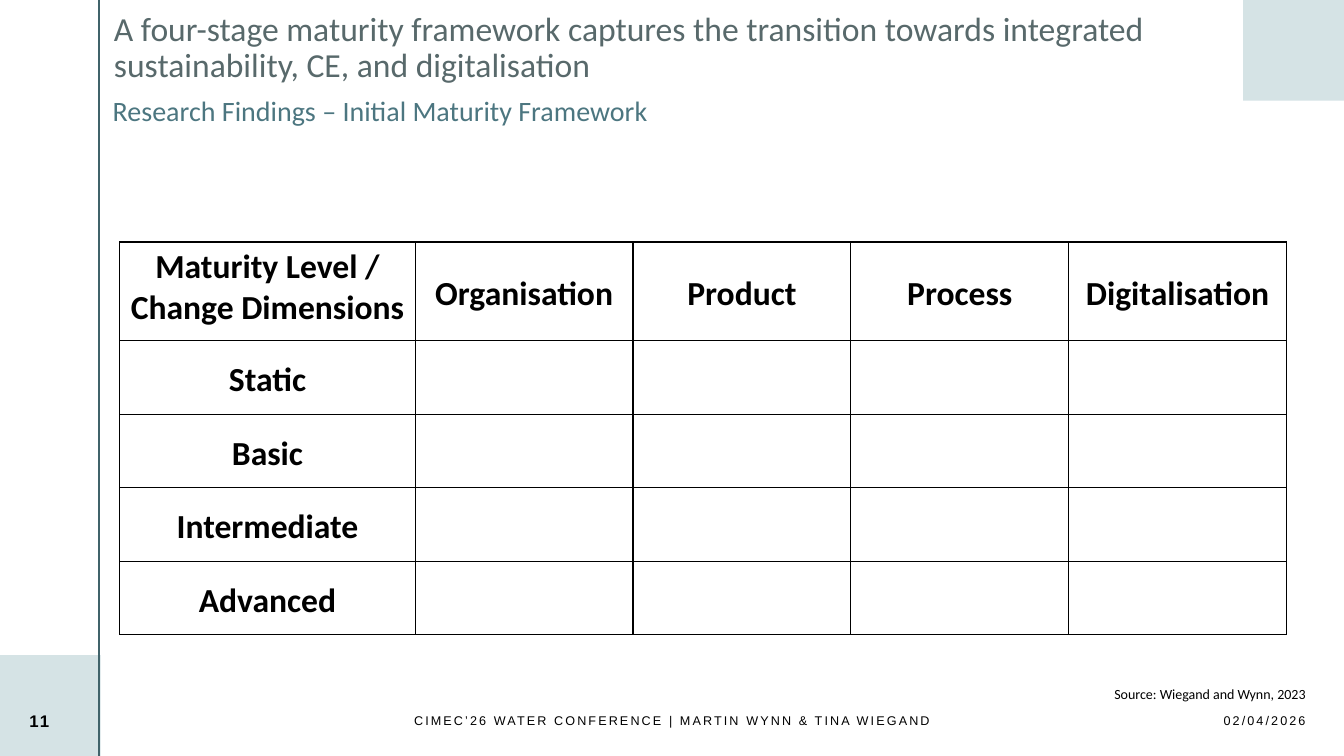
from dataclasses import dataclass
from lxml.etree import SubElement
from pptx import Presentation
from pptx.dml.color import RGBColor
from pptx.enum.shapes import MSO_CONNECTOR, MSO_SHAPE
from pptx.enum.text import MSO_ANCHOR, MSO_AUTO_SIZE, PP_ALIGN
from pptx.oxml.ns import qn
from pptx.util import Pt


@dataclass(frozen=True)
class Style:
    size: float
    color: str = "000000"
    font: str = "Calibri"
    bold: bool = False
    tracking: float = 0


@dataclass(frozen=True)
class Theme:
    panel: str = "D5E3E5"
    rule: str = "40636A"
    grid: str = "000000"
    title: Style = Style(24, "58696B")
    subtitle: Style = Style(20, "4C7680")
    table: Style = Style(24, bold=True)
    source: Style = Style(10)
    footer: Style = Style(9, font="Arial", tracking=1.5)
    number: Style = Style(12, font="Arial", bold=True, tracking=1.5)


THEME = Theme()
LEFT, CENTER, RIGHT = PP_ALIGN.LEFT, PP_ALIGN.CENTER, PP_ALIGN.RIGHT
TOP, MIDDLE = MSO_ANCHOR.TOP, MSO_ANCHOR.MIDDLE

TITLE = ("A four-stage maturity framework captures the transition towards "
         "integrated sustainability, CE, and digitalisation")
CORNER = "Maturity Level / Change Dimensions"
DIMENSIONS = ["Organisation", "Product", "Process", "Digitalisation"]
LEVELS = ["Static", "Basic", "Intermediate", "Advanced"]
TEXTS = [
    ("02/04/2026", (830.9, 500.4, 108.7, 28.8), THEME.footer, RIGHT, MIDDLE, 1),
    ("CIMEC’26 WATER CONFERENCE | MARTIN WYNN & TINA WIEGAND",
     (281.5, 500.4, 396.7, 28.8), THEME.footer, CENTER, MIDDLE, 1),
    ("Research Findings – Initial Maturity Framework",
     (73.4, 61.2, 885.6, 38.9), THEME.subtitle, LEFT, MIDDLE, 0.9),
    ("11", (-10, 489, 76.3, 51), THEME.number, CENTER, MIDDLE, 1),
    ("Source: Wiegand and Wynn, 2023",
     (739.4, 486, 200.2, 51), THEME.source, RIGHT, TOP, 1),
]

WIDTH, HEIGHT, PANEL = 960, 540, 72
RULE_X = 70.6
TITLE_BOX = (74.2, 0, 812.2, 69.8)
TABLE_LEFT, TABLE_TOP = 85.6, 172.8
COLUMNS = [211] + [155.6] * len(DIMENSIONS)
ROWS = [70.5] + [52.5] * len(LEVELS)


def points(values):
    return [Pt(value) for value in values]


def write(frame, text, style, align, spacing=1):
    paragraph = frame.paragraphs[0]
    paragraph.alignment = align
    paragraph.line_spacing = spacing
    run = paragraph.add_run()
    run.text = text
    run.font.size = Pt(style.size)
    run.font.name = style.font
    run.font.bold = style.bold
    run.font.color.rgb = RGBColor.from_string(style.color)
    if style.tracking:
        run.font._element.set("spc", str(int(style.tracking * 100)))


def add_text(slide, text, box, style, align, anchor, spacing):
    frame = slide.shapes.add_textbox(*points(box)).text_frame
    frame.word_wrap = True
    frame.vertical_anchor = anchor
    write(frame, text, style, align, spacing)


def add_panel(slide, left, top):
    panel = slide.shapes.add_shape(MSO_SHAPE.RECTANGLE, *points((left, top, PANEL, PANEL)))
    panel.shadow.inherit = False
    panel.fill.solid()
    panel.fill.fore_color.rgb = RGBColor.from_string(THEME.panel)
    panel.line.fill.background()


def add_rule(slide):
    rule = slide.shapes.add_connector(
        MSO_CONNECTOR.STRAIGHT, *points((RULE_X, 0, RULE_X, HEIGHT)))
    rule.line.width = Pt(1.5)
    rule.line.color.rgb = RGBColor.from_string(THEME.rule)
    SubElement(rule._element.spPr, qn("a:effectLst"))


def add_title(slide):
    title = slide.shapes.title
    title.left, title.top, title.width, title.height = points(TITLE_BOX)
    frame = title.text_frame
    frame.auto_size = MSO_AUTO_SIZE.NONE
    frame.word_wrap = True
    frame.vertical_anchor = MIDDLE
    write(frame, TITLE, THEME.title, LEFT, 0.9)


def format_cell(cell):
    properties = cell._tc.get_or_add_tcPr()
    for side in ("lnL", "lnR", "lnT", "lnB"):
        border = SubElement(properties, qn(f"a:{side}"), w=str(Pt(1)))
        fill = SubElement(border, qn("a:solidFill"))
        SubElement(fill, qn("a:srgbClr"), val=THEME.grid)
    cell.fill.background()


def add_framework(slide):
    cells = [[CORNER] + DIMENSIONS]
    cells += [[level] + [""] * len(DIMENSIONS) for level in LEVELS]
    table = slide.shapes.add_table(
        len(ROWS), len(COLUMNS),
        *points((TABLE_LEFT, TABLE_TOP, sum(COLUMNS), sum(ROWS)))).table
    table.first_row = table.horz_banding = False
    for column, width in zip(table.columns, COLUMNS):
        column.width = Pt(width)
    for row, height, texts in zip(table.rows, ROWS, cells):
        row.height = Pt(height)
        for cell, text in zip(row.cells, texts):
            format_cell(cell)
            if text == CORNER:
                write(cell.text_frame, text, THEME.table, CENTER)
            elif text:
                cell.vertical_anchor = MIDDLE
                cell.margin_left = cell.margin_right = Pt(0.7)
                cell.margin_top = cell.margin_bottom = Pt(0)
                write(cell.text_frame, text, THEME.table, CENTER, 1.15)


def main():
    presentation = Presentation()
    presentation.slide_width, presentation.slide_height = points((WIDTH, HEIGHT))
    slide = presentation.slides.add_slide(presentation.slide_layouts[5])
    add_panel(slide, 0, HEIGHT - PANEL)
    add_panel(slide, WIDTH - PANEL, 0)
    add_rule(slide)
    add_title(slide)
    for entry in TEXTS:
        add_text(slide, *entry)
    add_framework(slide)
    presentation.save("out.pptx")


if __name__ == "__main__":
    main()
